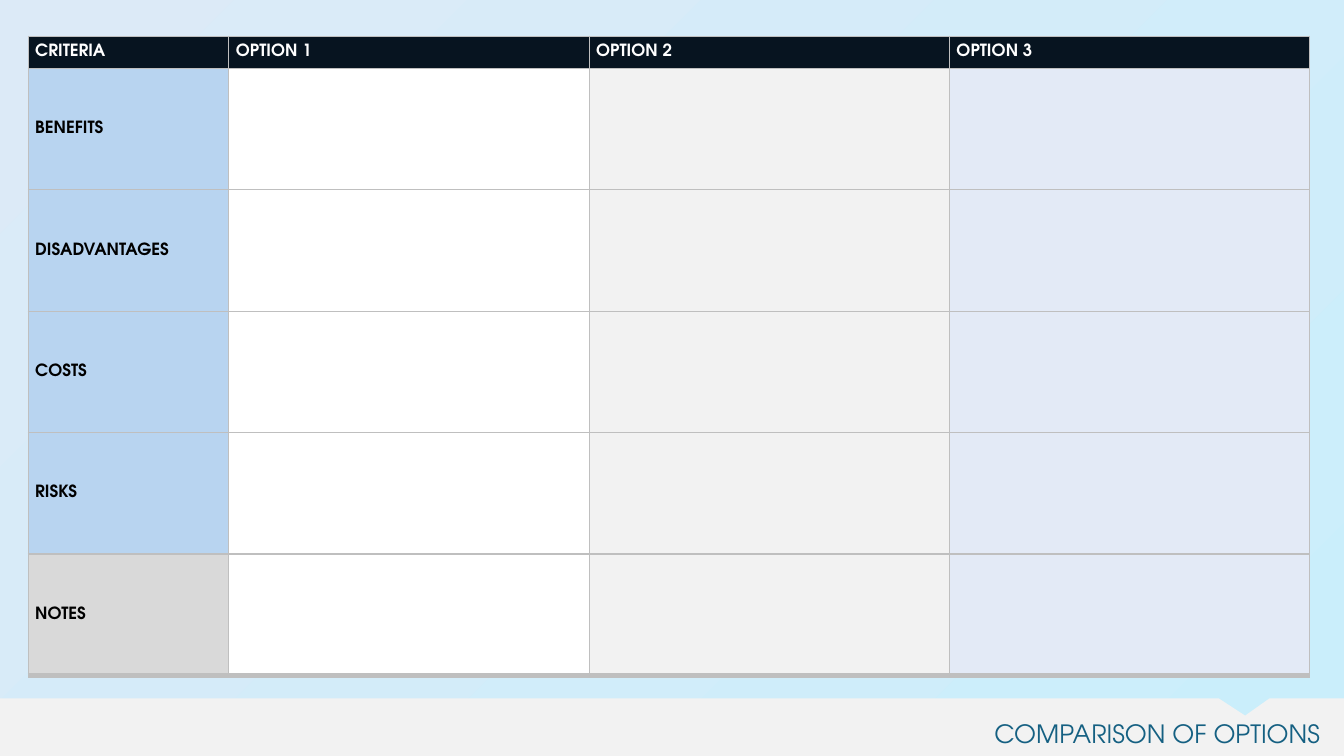
from dataclasses import dataclass

from lxml import etree
from pptx import Presentation
from pptx import util as u
from pptx.dml.color import RGBColor
from pptx.enum import text
from pptx.oxml import ns


@dataclass(frozen=True)
class Theme:
    font: str = "TeX Gyre Adventor"
    title: int = 18
    label: int = 12
    glow: str = "CAEEFB"
    haze: str = "DCEAF7"
    band: str = "F2F2F2"
    teal: str = "156082"
    head: str = "071420"
    white: str = "FFFFFF"
    black: str = "000000"
    side: str = "B8D4F0"
    note: str = "D9D9D9"
    rule: str = "BFBFBF"
    tints: tuple = ("FFFFFF", "F2F2F2", "E3EAF6")


THEME = Theme()
HEADS = ["CRITERIA", "OPTION 1", "OPTION 2", "OPTION 3"]
LABELS = ["BENEFITS", "DISADVANTAGES", "COSTS", "RISKS", "NOTES"]


def rgb(code):
    return RGBColor.from_string(code)


def style(para, size, color, bold=False):
    for run in para.runs:
        font = run.font
        font.name, font.size, font.bold = THEME.font, u.Pt(size), bold
        font.color.rgb = rgb(color)


def paint(slide):
    fill = slide.background.fill
    fill.gradient()
    fill.gradient_angle = 135
    for stop, code in zip(fill.gradient_stops, (THEME.glow, THEME.haze)):
        stop.color.rgb = rgb(code)


def footer(slide, left, top, width, height):
    notch = [(12.09, 0), (12.35, 0.17), (12.59, 0)]
    edge = notch + [(width, 0), (width, height), (0, height)]
    points = [(u.Inches(left + x), u.Inches(top + y)) for x, y in edge]
    build = slide.shapes.build_freeform(u.Inches(left), u.Inches(top))
    build.add_line_segments(points, close=True)
    band = build.convert_to_shape()
    band.shadow.inherit = False
    band.fill.solid()
    band.fill.fore_color.rgb = rgb(THEME.band)
    band.line.fill.background()

    box = slide.shapes.add_textbox(
        u.Inches(left + 1.28), u.Inches(top + 0.15),
        u.Inches(width - 1.42), u.Inches(0.4))
    frame = box.text_frame
    frame.word_wrap = True
    frame.auto_size = text.MSO_AUTO_SIZE.SHAPE_TO_FIT_TEXT
    frame.text = "COMPARISON OF OPTIONS"
    para = frame.paragraphs[0]
    para.alignment = text.PP_ALIGN.RIGHT
    style(para, THEME.title, THEME.teal)


def border(cell, above, below):
    props = cell._tc.get_or_add_tcPr()
    sides = {"lnL": 1, "lnR": 1, "lnT": above, "lnB": below}
    for spot, (side, width) in enumerate(sides.items()):
        line = etree.Element(ns.qn("a:" + side), w=str(u.Pt(width)))
        fill = etree.SubElement(line, ns.qn("a:solidFill"))
        etree.SubElement(fill, ns.qn("a:srgbClr"), val=THEME.rule)
        props.insert(spot, line)


def shade(row, col):
    if row == 0:
        return THEME.head
    if col:
        return THEME.tints[col - 1]
    return THEME.note if row == len(LABELS) else THEME.side


def label(cell, words, color):
    cell.vertical_anchor = text.MSO_ANCHOR.MIDDLE
    cell.margin_left = cell.margin_right = u.Inches(0.07)
    cell.margin_top = cell.margin_bottom = 0
    cell.text = words
    style(cell.text_frame.paragraphs[0], THEME.label, color, True)


def matrix(slide, left, top, width, height):
    first, head = 1.99, 0.32
    rows, cols = len(LABELS) + 1, len(HEADS)
    grid = slide.shapes.add_table(
        rows, cols, u.Inches(left), u.Inches(top),
        u.Inches(width), u.Inches(height)).table
    grid.horz_banding = False
    for col, item in enumerate(grid.columns):
        item.width = u.Inches((width - first) / (cols - 1) if col else first)
    for row, item in enumerate(grid.rows):
        item.height = u.Inches((height - head) / (rows - 1) if row else head)

    rules = [1] * (rows - 1) + [2.25, 4.5]
    for row in range(rows):
        for col in range(cols):
            cell = grid.cell(row, col)
            cell.fill.solid()
            cell.fill.fore_color.rgb = rgb(shade(row, col))
            border(cell, rules[row], rules[row + 1])
            if row == 0:
                label(cell, HEADS[col], THEME.white)
            elif col == 0:
                label(cell, LABELS[row - 1], THEME.black)


def main():
    deck = Presentation()
    deck.slide_width, deck.slide_height = u.Inches(13.33), u.Inches(7.5)
    slide = deck.slides.add_slide(deck.slide_layouts[6])
    paint(slide)
    footer(slide, 0, 6.93, 13.33, 0.57)
    matrix(slide, 0.28, 0.36, 12.71, 6.34)
    deck.save("out.pptx")


if __name__ == "__main__":
    main()
